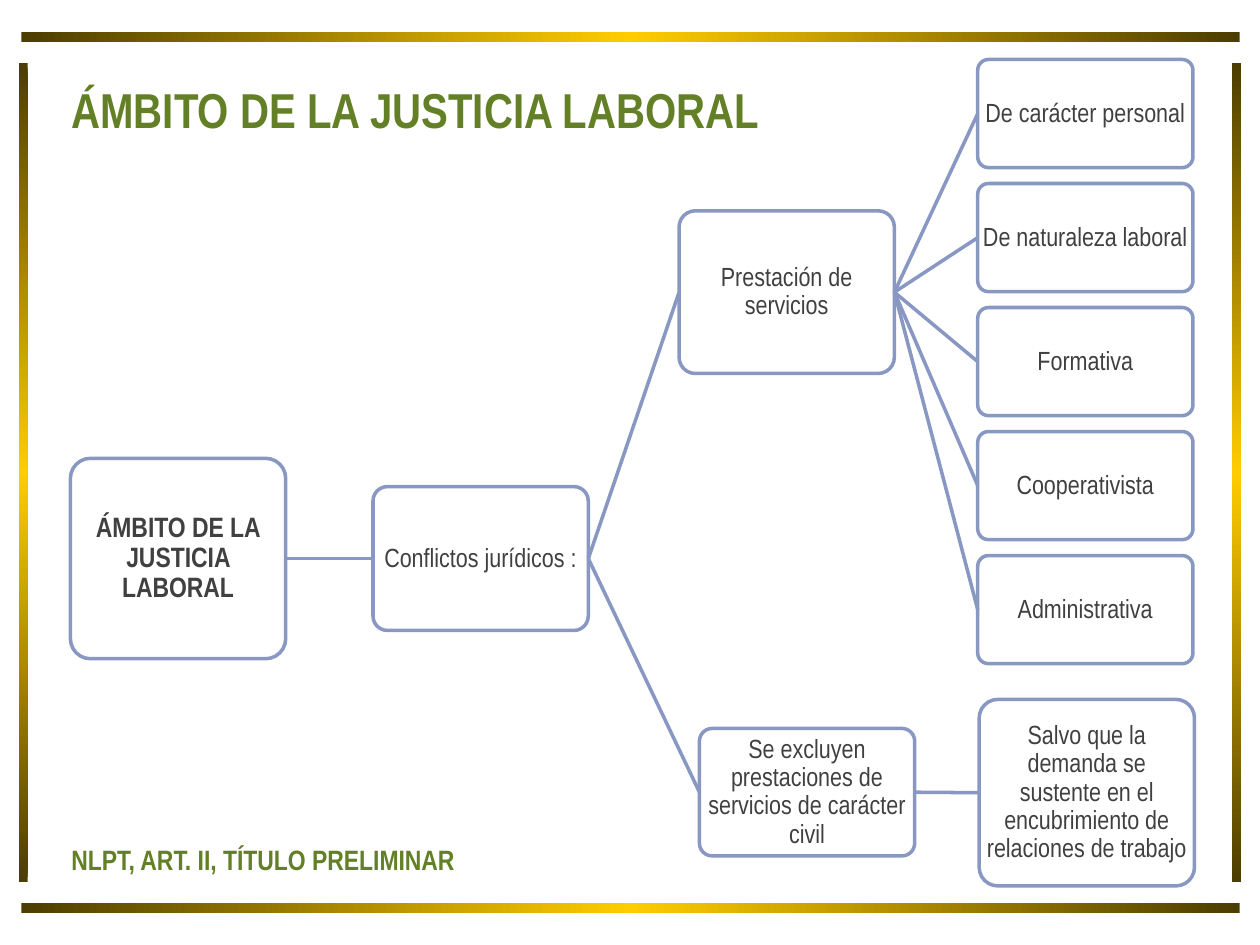
from copy import deepcopy
from dataclasses import dataclass
from typing import Optional

from lxml.etree import SubElement
from pptx import Presentation
from pptx.dml.color import RGBColor
from pptx.enum.shapes import MSO_CONNECTOR, MSO_SHAPE
from pptx.enum.text import MSO_ANCHOR, PP_ALIGN
from pptx.oxml.ns import qn
from pptx.util import Cm, Pt

FONT = "Arial Narrow"
GREEN, GREY, BLUE = "638026", "404040", "8898C3"
DARK_GOLD, GOLD = "4C3D00", "FFCC00"
NODE_WIDTH = 4.34
LEAF_X, LEAF_Y, LEAF_STEP, LEAF_HEIGHT = 19.71, 2.29, 2.5, 2.18


@dataclass(frozen=True)
class Bar:
    left: float
    top: float
    width: float
    height: float
    angle: int


@dataclass(frozen=True)
class Node:
    text: str
    left: float
    middle: float
    height: float
    parent: Optional["Node"] = None
    size: int = 15
    bold: bool = False


def rgb(value: str) -> RGBColor:
    return RGBColor.from_string(value)


def add_text(frame, text: str, size: int, color: str, bold: bool):
    frame.word_wrap = True
    paragraph = frame.paragraphs[0]
    run = paragraph.add_run()
    run.text = text
    run.font.name = FONT
    run.font.size = Pt(size)
    run.font.bold = bold
    run.font.color.rgb = rgb(color)
    return paragraph


def draw_bar(slide, bar: Bar) -> None:
    band = slide.shapes.add_shape(MSO_SHAPE.RECTANGLE, Cm(bar.left), Cm(bar.top),
                                  Cm(bar.width), Cm(bar.height))
    band.shadow.inherit = False
    band.line.fill.background()
    band.fill.gradient()
    band.fill.gradient_angle = bar.angle
    # The default gradient has two stops; a third makes the gold centre
    stop_list = band._element.spPr.find(".//" + qn("a:gsLst"))
    stop_list.insert(1, deepcopy(stop_list[0]))
    colors = (DARK_GOLD, GOLD, DARK_GOLD)
    for stop, color, position in zip(band.fill.gradient_stops, colors, (0, 0.5, 1)):
        stop.color.rgb = rgb(color)
        stop.position = position


def draw_link(slide, parent: Node, child: Node) -> None:
    link = slide.shapes.add_connector(
        MSO_CONNECTOR.STRAIGHT, Cm(parent.left + NODE_WIDTH), Cm(parent.middle),
        Cm(child.left), Cm(child.middle))
    link.line.color.rgb = rgb(BLUE)
    link.line.width = Pt(2)
    SubElement(link._element.spPr, qn("a:effectLst"))


def draw_node(slide, node: Node) -> None:
    box = slide.shapes.add_shape(
        MSO_SHAPE.ROUNDED_RECTANGLE, Cm(node.left), Cm(node.middle - node.height / 2),
        Cm(NODE_WIDTH), Cm(node.height))
    box.adjustments[0] = 0.1
    box.shadow.inherit = False
    box.fill.background()
    box.line.color.rgb = rgb(BLUE)
    box.line.width = Pt(2)
    frame = box.text_frame
    frame.vertical_anchor = MSO_ANCHOR.MIDDLE
    frame.margin_left = frame.margin_right = Cm(0.03)
    frame.margin_top = frame.margin_bottom = Cm(0.03)
    paragraph = add_text(frame, node.text, node.size, GREY, node.bold)
    paragraph.alignment = PP_ALIGN.CENTER
    paragraph.line_spacing = 0.9


def main() -> None:
    presentation = Presentation()
    presentation.slide_width, presentation.slide_height = Cm(25.4), Cm(19.05)
    slide = presentation.slides.add_slide(presentation.slide_layouts[5])

    # Golden frame
    for top in (0.64, 18.21):
        draw_bar(slide, Bar(0.43, top, 24.56, 0.2, 0))
    for left in (0.38, 24.84):
        draw_bar(slide, Bar(left, 1.27, 0.18, 16.51, 90))

    # Title
    title = slide.shapes.title
    title.left, title.top, title.width, title.height = Cm(1.19), Cm(1.19), Cm(21.59), Cm(2.03)
    title.text_frame.vertical_anchor = MSO_ANCHOR.MIDDLE
    heading = add_text(title.text_frame, "ÁMBITO DE LA JUSTICIA LABORAL", 28, GREEN, True)
    heading.alignment = PP_ALIGN.LEFT

    # Tree of the scope of labour justice
    scope = Node("ÁMBITO DE LA JUSTICIA LABORAL", 1.42, 11.26, 4.04, size=16, bold=True)
    conflicts = Node("Conflictos jurídicos :", 7.52, 11.26, 2.9, scope)
    services = Node("Prestación de servicios", 13.69, 5.89, 3.28, conflicts)
    kinds = [
        Node(kind, LEAF_X, LEAF_Y + row * LEAF_STEP, LEAF_HEIGHT, services)
        for row, kind in enumerate(("De carácter personal", "De naturaleza laboral",
                                    "Formativa", "Cooperativista", "Administrativa"))
    ]
    excluded = Node("Se excluyen prestaciones de servicios de carácter civil",
                    14.1, 15.97, 2.57, conflicts)
    exception = Node("Salvo que la demanda se sustente en el encubrimiento de "
                     "relaciones de trabajo", 19.74, 15.98, 3.76, excluded)
    for node in (scope, conflicts, services, *kinds, excluded, exception):
        if node.parent:
            draw_link(slide, node.parent, node)
        draw_node(slide, node)

    # Legal reference
    reference = slide.shapes.add_textbox(Cm(1.19), Cm(16.87), Cm(11.91), Cm(1.19))
    add_text(reference.text_frame, "NLPT, ART. II, TÍTULO PRELIMINAR", 16, GREEN, True)

    presentation.save("out.pptx")


if __name__ == "__main__":
    main()
